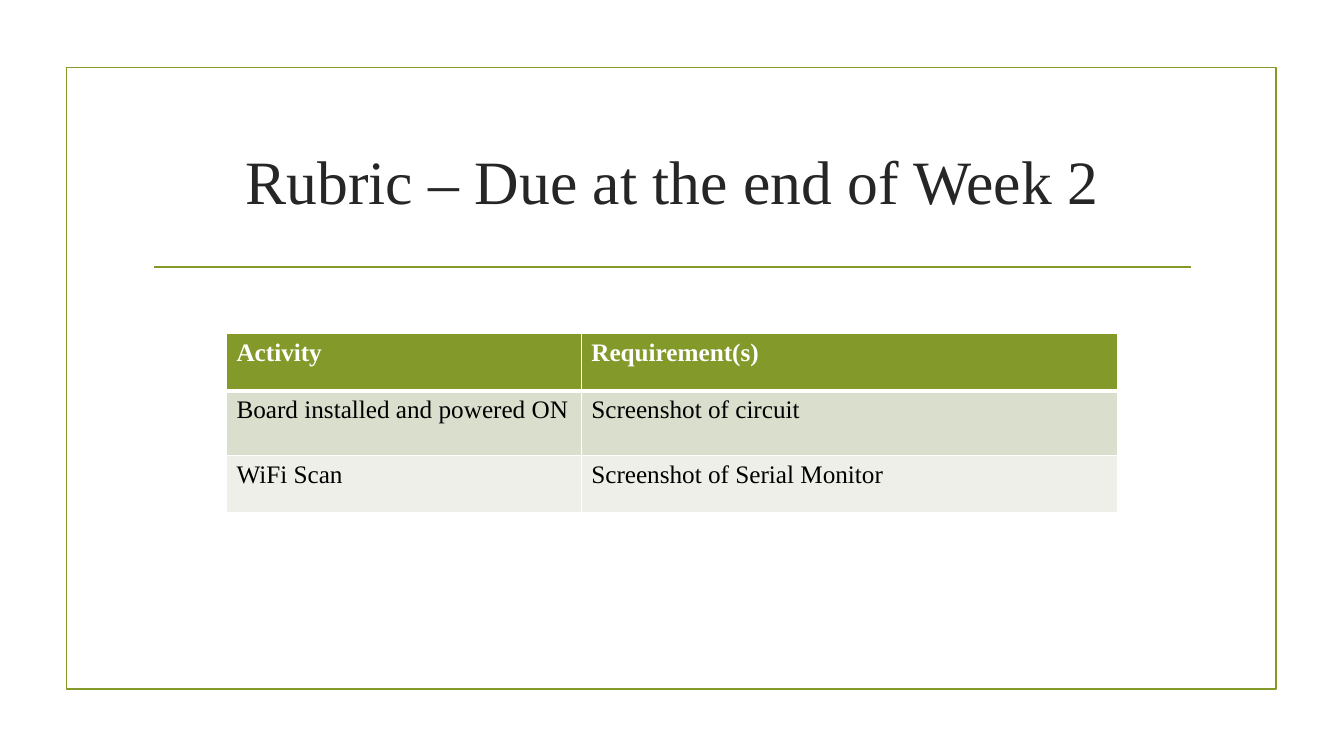
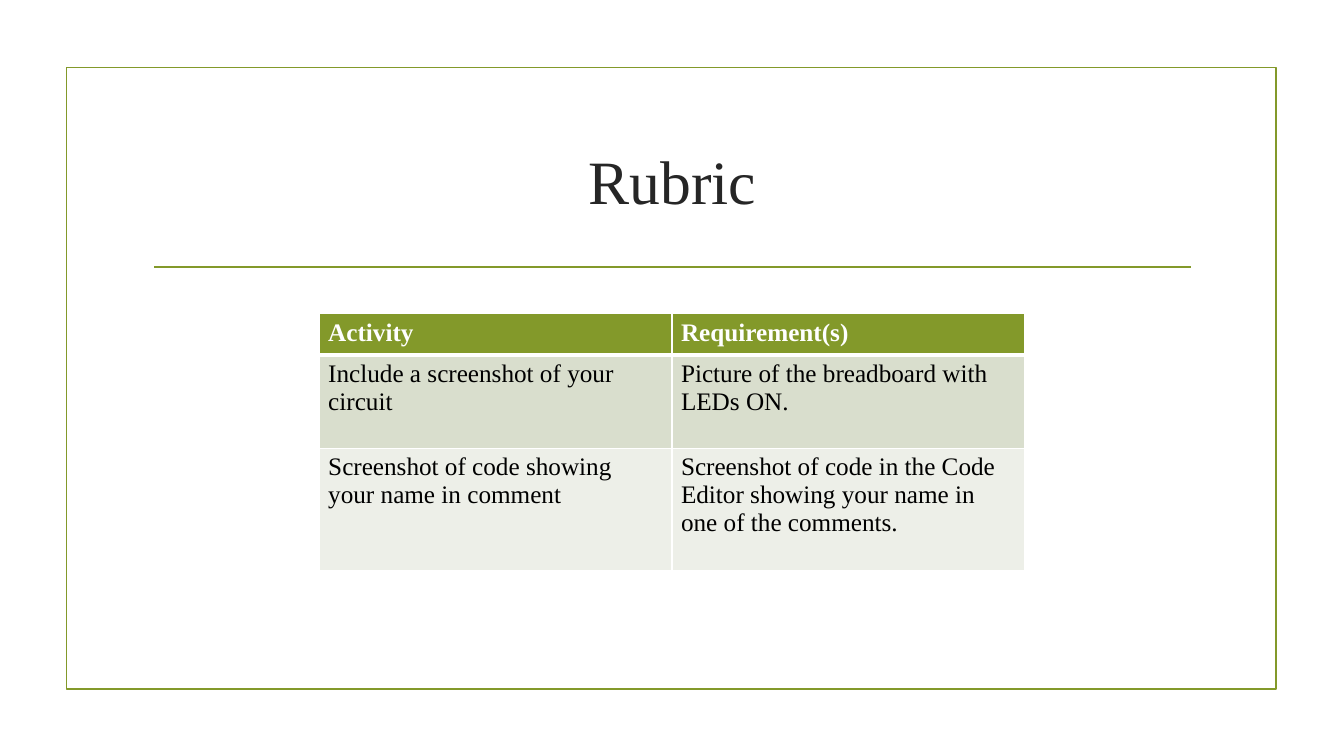
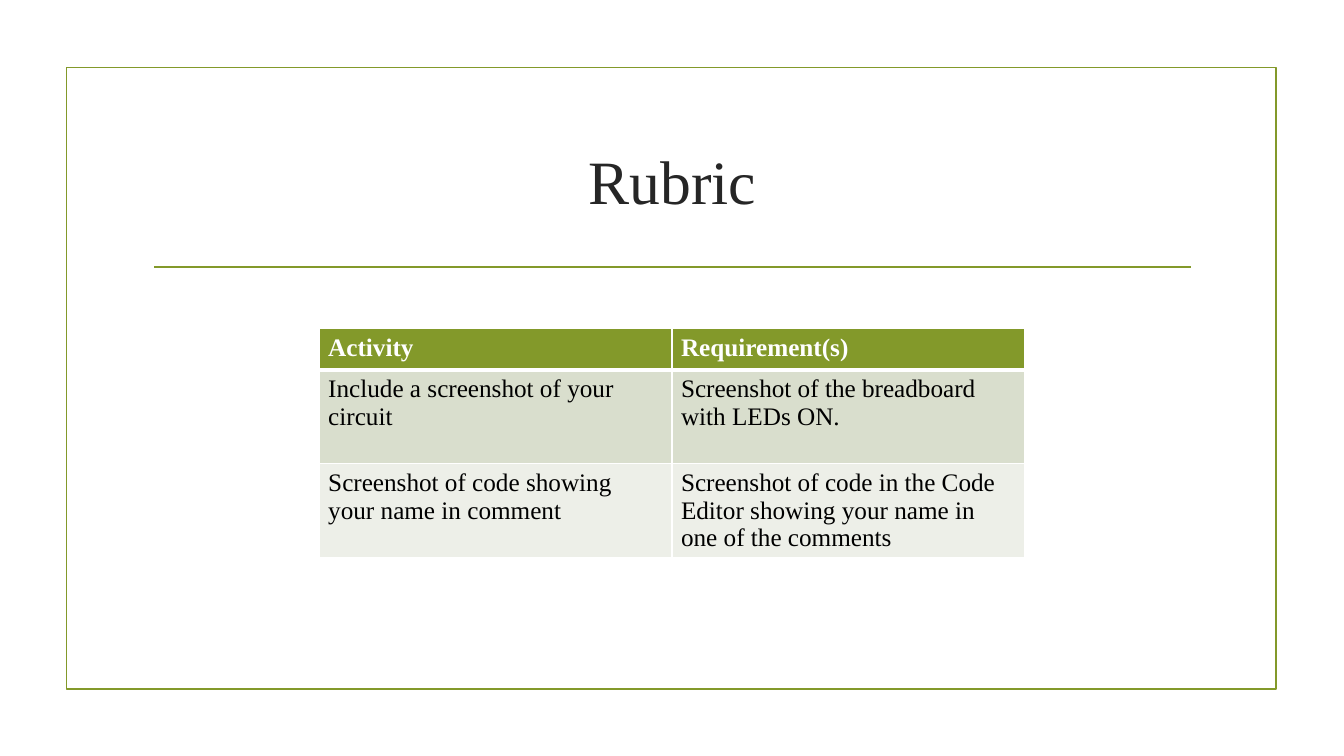
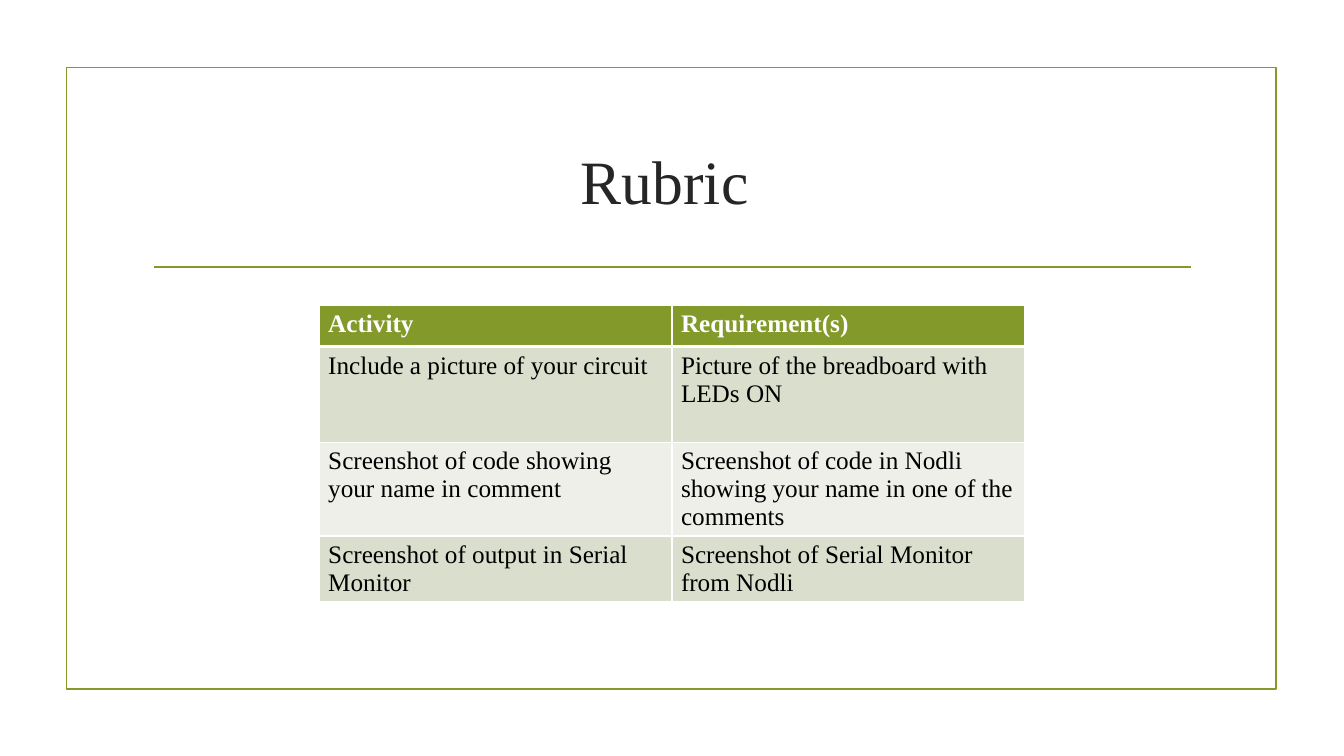
from lxml import etree
from pptx import Presentation
from pptx import util as u
from pptx.dml.color import RGBColor
from pptx.enum import shapes, text
from pptx.oxml import ns

COLOURS = {"accent": "83992A", "title": "262626", "body": "000000",
           "paper": "FFFFFF", "band_dark": "D9DECD", "band_light": "EDEFE8"}
FACE = "Times New Roman"
WIDTH, HEIGHT = u.Inches(13.33), u.Inches(7.5)
LINE_WIDTH = u.Pt(1.25)

TITLE_FONT = {"name": FACE, "size": u.Pt(44), "bold": False}
HEADER_FONT = {"name": FACE, "size": u.Pt(18), "bold": True}
CELL_FONT = {**HEADER_FONT, "bold": False}

# Boxes are left, top, width, height in percent of the slide
FRAME = (4.95, 8.93, 90, 82.27)
RULE = (11.48, 35.33, 77.12, 0)
TITLE = (10.65, 14.27, 78.77, 19.07)

HEADER = ("Activity", "Requirement(s)")
WIDE = {"columns": (26.4, 39.9), "inset": 0.1}
EVEN = {"columns": (26.25, 26.25), "inset": 0.09}
CODE_TASK = "Screenshot of code showing your name in comment"
EDITOR_PROOF = ("Screenshot of code in the Code Editor showing your name "
                "in one of the comments")

# Tops and row heights are percent of the slide height
RUBRICS = [
    {"title": "Rubric – Due at the end of Week 2", **WIDE,
     "top": 44.13, "rows": (7.6, 8.55, 7.6),
     "tasks": [("Board installed and powered ON", "Screenshot of circuit"),
               ("WiFi Scan", "Screenshot of Serial Monitor")]},
    {"title": "Rubric", **EVEN,
     "top": 41.47, "rows": (5.45, 12.4, 16.15),
     "tasks": [("Include a screenshot of your circuit",
                "Picture of the breadboard with LEDs ON."),
               (CODE_TASK, EDITOR_PROOF + ".")]},
    {"title": "Rubric", **EVEN,
     "top": 43.47, "rows": (5.45, 12.4, 12.4),
     "tasks": [("Include a screenshot of your circuit",
                "Screenshot of the breadboard with LEDs ON."),
               (CODE_TASK, EDITOR_PROOF)]},
    {"title": "Rubric ", **EVEN,
     "top": 40.4, "rows": (5.45, 12.65, 12.4, 8.55),
     "tasks": [("Include a picture of your circuit",
                "Picture of the breadboard with LEDs ON"),
               (CODE_TASK, "Screenshot of code in Nodli showing your name "
                           "in one of the comments"),
               ("Screenshot of output in Serial Monitor",
                "Screenshot of Serial Monitor from Nodli")]},
]


def colour(name):
    return RGBColor.from_string(COLOURS[name])


def across(percent):
    return round(WIDTH * percent / 100)


def down(percent):
    return round(HEIGHT * percent / 100)


def place(box):
    left, top, width, height = box
    return across(left), down(top), across(width), down(height)


def set_font(font, values, ink):
    for name, value in values.items():
        setattr(font, name, value)
    font.color.rgb = colour(ink)


def add_decoration(page, layout):
    """Draw the frame and title rule, then hand them to the shared layout."""
    frame = page.shapes.add_shape(shapes.MSO_SHAPE.RECTANGLE, *place(FRAME))
    frame.shadow.inherit = False
    frame.fill.background()
    left, top, width, _ = place(RULE)
    rule = page.shapes.add_connector(shapes.MSO_CONNECTOR.STRAIGHT,
                                     left, top, left + width, top)
    etree.SubElement(rule.element.spPr, ns.qn("a:effectLst"))
    for item in (frame, rule):
        item.line.color.rgb = colour("accent")
        item.line.width = LINE_WIDTH
        layout.element.cSld.spTree.append(item.element)


def add_title(page, wording, box):
    title = page.shapes.title
    title.left, title.top, title.width, title.height = place(box)
    frame = title.text_frame
    frame.word_wrap = True
    frame.vertical_anchor = text.MSO_ANCHOR.MIDDLE
    para = frame.paragraphs[0]
    para.alignment = text.PP_ALIGN.CENTER
    span = para.add_run()
    span.text = wording
    set_font(span.font, TITLE_FONT, "title")


def set_borders(cell, points):
    """Rule the cell; points maps each side to its width, in schema order."""
    props = cell._tc.get_or_add_tcPr()
    for index, (side, width) in enumerate(points.items()):
        line = etree.Element(ns.qn("a:ln" + side), w=str(u.Pt(width)))
        fill = etree.SubElement(line, ns.qn("a:solidFill"))
        etree.SubElement(fill, ns.qn("a:srgbClr"), val=COLOURS["paper"])
        props.insert(index, line)


def fill_cell(cell, wording, row, inset):
    header = row == 0
    cell.margin_left = cell.margin_right = u.Inches(inset)
    cell.margin_top = cell.margin_bottom = u.Inches(0.05)
    band = "accent" if header else "band_dark" if row % 2 else "band_light"
    cell.fill.solid()
    cell.fill.fore_color.rgb = colour(band)
    set_borders(cell, {"L": 1, "R": 1, "T": 3 if row == 1 else 1,
                       "B": 3 if header else 1})
    span = cell.text_frame.paragraphs[0].add_run()
    span.text = wording
    set_font(span.font, HEADER_FONT if header else CELL_FONT,
             "paper" if header else "body")


def add_rubric_table(page, rubric):
    """Place the table centred across the slide."""
    columns, rows = rubric["columns"], rubric["rows"]
    width = sum(columns)
    box = ((100 - width) / 2, rubric["top"], width, sum(rows))
    table = page.shapes.add_table(len(rows), len(columns), *place(box)).table
    for column, share in zip(table.columns, columns):
        column.width = across(share)
    for row, share in zip(table.rows, rows):
        row.height = down(share)
    for row, wordings in enumerate([HEADER, *rubric["tasks"]]):
        for column, wording in enumerate(wordings):
            fill_cell(table.cell(row, column), wording, row, rubric["inset"])


def main():
    deck = Presentation()
    deck.slide_width, deck.slide_height = WIDTH, HEIGHT
    layout = deck.slide_layouts.get_by_name("Title Only")
    for index, rubric in enumerate(RUBRICS):
        page = deck.slides.add_slide(layout)
        if index == 0:
            add_decoration(page, layout)
        add_title(page, rubric["title"], TITLE)
        add_rubric_table(page, rubric)
    deck.save("out.pptx")


if __name__ == "__main__":
    main()
